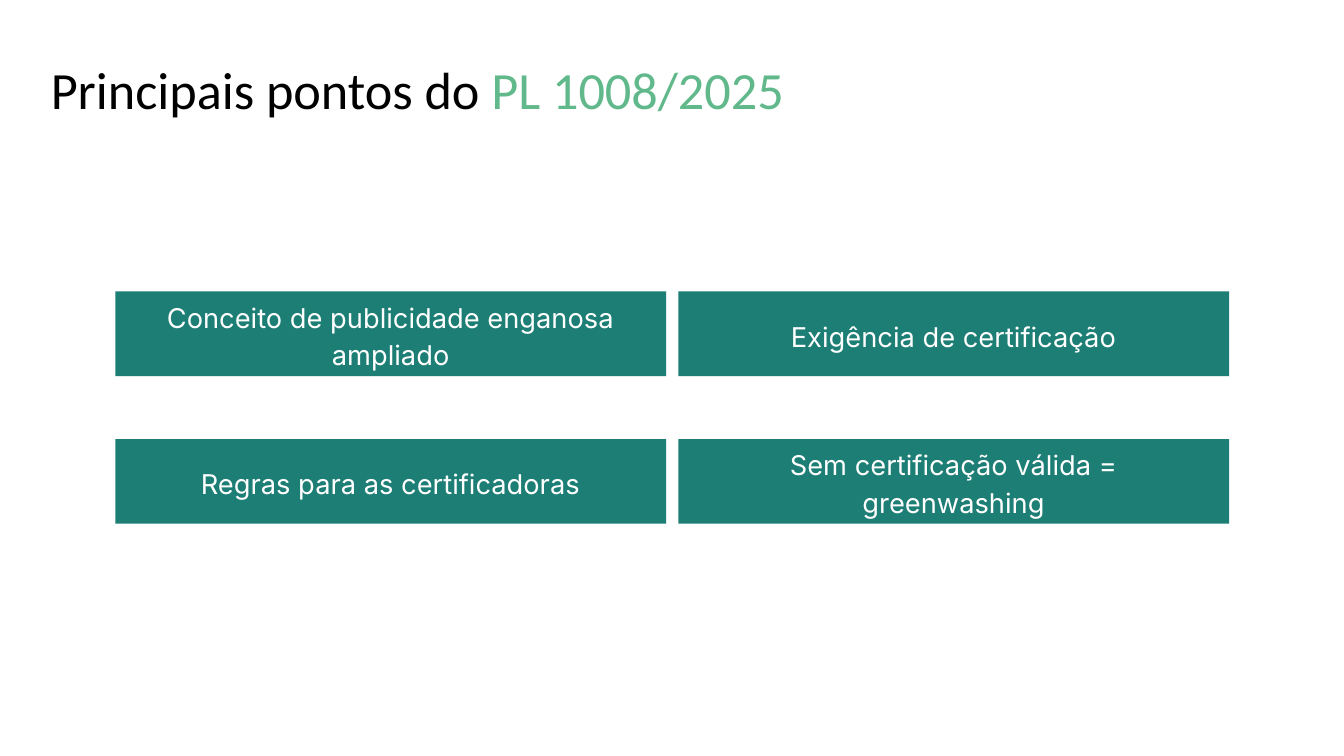
from dataclasses import dataclass
from typing import Any

import pptx
import pptx.dml.color
import pptx.enum.shapes
import pptx.enum.text
import pptx.util

Cm = pptx.util.Cm
Pt = pptx.util.Pt
Anchor = pptx.enum.text.MSO_ANCHOR
Align = pptx.enum.text.PP_ALIGN

LEFT, TOP = 2.18, 5.51
WIDTH, HEIGHT = 10.41, 1.6
COLUMN_STEP, ROW_STEP = 10.64, 2.79
COLUMNS = 2


@dataclass
class Point:
    text: str
    row: int
    column: int


def rgb(value: str) -> pptx.dml.color.RGBColor:
    return pptx.dml.color.RGBColor.from_string(value)


def apply(target: Any, values: dict[str, Any]) -> None:
    for name, value in values.items():
        setattr(target, name, value)


def frame_format(inset: float, anchor: Any) -> dict[str, Any]:
    sides = ("left", "top", "right", "bottom")
    return {f"margin_{side}": Cm(inset) for side in sides} | {
        "word_wrap": True,
        "vertical_anchor": anchor,
        "auto_size": pptx.enum.text.MSO_AUTO_SIZE.NONE,
    }


def add_run(p: Any, text: str, font: str, size: float, color: str) -> None:
    r = p.add_run()
    r.text = text
    apply(r.font, {"name": font, "size": Pt(size)})
    r.font.color.rgb = rgb(color)


def set_title(s: Any, parts: list[tuple[str, str]]) -> None:
    sp = s.shapes.title
    apply(sp, {"left": Cm(0.71), "top": Cm(0.84), "width": Cm(17.6), "height": Cm(1.7)})
    tf = sp.text_frame
    apply(tf, frame_format(0.25, Anchor.TOP))
    p = tf.paragraphs[0]
    p.alignment = Align.LEFT
    for text, color in parts:
        add_run(p, text, "Calibri", 28, color)


def add_point(s: Any, point: Point) -> None:
    sp = s.shapes.add_shape(
        pptx.enum.shapes.MSO_SHAPE.RECTANGLE,
        Cm(LEFT + point.column * COLUMN_STEP),
        Cm(TOP + point.row * ROW_STEP),
        Cm(WIDTH),
        Cm(HEIGHT),
    )
    sp.shadow.inherit = False
    sp.fill.solid()
    sp.fill.fore_color.rgb = rgb("1D7E75")
    sp.line.fill.background()
    tf = sp.text_frame
    apply(tf, frame_format(0.38, Anchor.MIDDLE))
    p = tf.paragraphs[0]
    apply(p, {"alignment": Align.CENTER, "line_spacing": 1.15})
    add_run(p, point.text, "Inter", 14.6, "FFFFFF")


def main() -> None:
    prs = pptx.Presentation()
    apply(prs, {"slide_width": Cm(25.4), "slide_height": Cm(14.29)})
    s = prs.slides.add_slide(prs.slide_layouts[5])
    set_title(s, [("Principais pontos do ", "000000"), ("PL 1008/2025", "61B98B")])
    texts = [
        "Conceito de publicidade enganosa ampliado",
        "Exigência de certificação",
        "Regras para as certificadoras",
        "Sem certificação válida = greenwashing",
    ]
    for i, text in enumerate(texts):
        add_point(s, Point(text, *divmod(i, COLUMNS)))
    prs.save("out.pptx")


if __name__ == "__main__":
    main()
